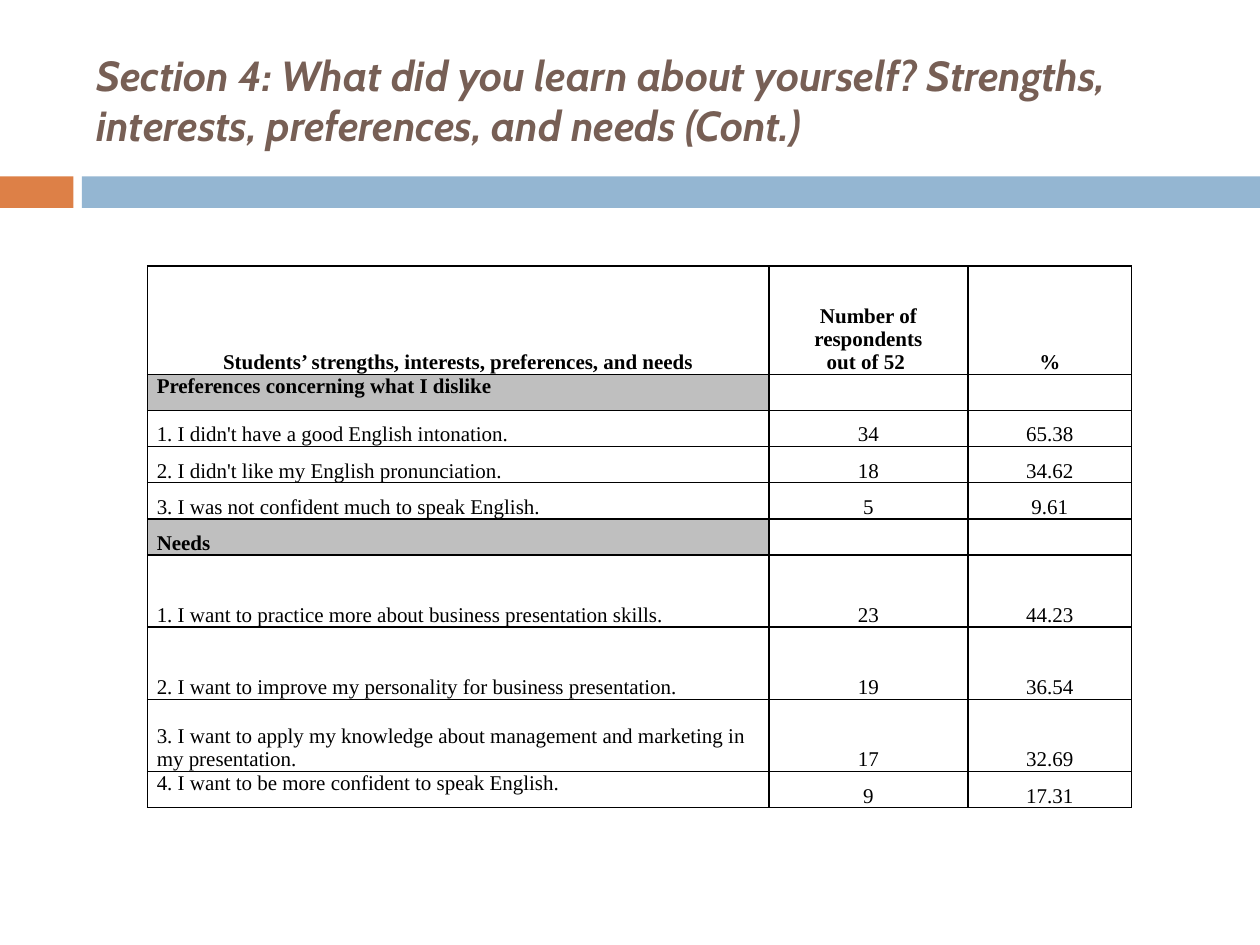
from dataclasses import dataclass

from lxml.etree import SubElement
from pptx import Presentation
from pptx.dml.color import RGBColor
from pptx.enum.shapes import MSO_SHAPE
from pptx.enum.text import MSO_ANCHOR, MSO_AUTO_SIZE, PP_ALIGN
from pptx.oxml.ns import qn
from pptx.util import Pt


@dataclass(frozen=True)
class Theme:
    title: str = "775F55"
    accent: str = "DD8047"
    band: str = "94B6D2"
    section: str = "BFBFBF"
    ink: str = "000000"
    title_font: str = "Cabin"
    body_font: str = "Times New Roman"
    title_size: float = 24
    body_size: float = 12
    border: float = 1


THEME = Theme()
TITLE = ("Section 4: What did you learn about yourself? Strengths, interests, "
         "preferences, and needs (Cont.)")
COLUMNS = (355, 113.8, 93.5)
HEADER = ("Students’ strengths, interests, preferences, and needs",
          "Number of respondents\nout of 52 ", "%")
# Height in row units, label anchor, cell texts; a lone label is a section row
ROWS = [
    (3, MSO_ANCHOR.BOTTOM, HEADER),
    (1, MSO_ANCHOR.TOP, ("Preferences concerning what I dislike",)),
    (1, MSO_ANCHOR.BOTTOM, ("1. I didn't have a good English intonation.", "34", "65.38")),
    (1, MSO_ANCHOR.BOTTOM, ("2. I didn't like my English pronunciation.", "18", "34.62")),
    (1, MSO_ANCHOR.BOTTOM, ("3. I was not confident much to speak English.", "5", "9.61")),
    (1, MSO_ANCHOR.BOTTOM, ("Needs",)),
    (2, MSO_ANCHOR.BOTTOM,
     ("1. I want to practice more about business presentation skills.", "23", "44.23")),
    (2, MSO_ANCHOR.BOTTOM,
     ("2. I want to improve my personality for business presentation.", "19", "36.54")),
    (2, MSO_ANCHOR.BOTTOM,
     ("3. I want to apply my knowledge about management and marketing in my presentation.",
      "17", "32.69")),
    (1, MSO_ANCHOR.TOP, ("4. I want to be more confident to speak English.", "9", "17.31")),
]


def rgb(color):
    return RGBColor.from_string(color)


def set_font(p, name, size, color, bold, italic=False):
    f = p.font
    f.name, f.size, f.bold, f.italic = name, Pt(size), bold, italic
    f.color.rgb = rgb(color)


def add_title(s, left, top, width, height):
    sp = s.shapes.title
    sp.left, sp.top, sp.width, sp.height = map(Pt, (left, top, width, height))
    tf = sp.text_frame
    tf.text = TITLE
    tf.auto_size = MSO_AUTO_SIZE.NONE
    tf.vertical_anchor = MSO_ANCHOR.MIDDLE
    p = tf.paragraphs[0]
    p.alignment = PP_ALIGN.LEFT
    set_font(p, THEME.title_font, THEME.title_size, THEME.title, True, True)


def add_divider(s, left, top, width, height):
    """Short accent block, a gap, then a band over the rest of the width."""
    block, gap = 42, 4.8
    rest = block + gap
    for x, w, color in ((left, block, THEME.accent),
                        (left + rest, width - rest, THEME.band)):
        sp = s.shapes.add_shape(MSO_SHAPE.RECTANGLE, Pt(x), Pt(top), Pt(w), Pt(height))
        sp.shadow.inherit = False
        sp.fill.solid()
        sp.fill.fore_color.rgb = rgb(color)
        sp.line.fill.background()


def add_borders(cell):
    tc_pr = cell._tc.get_or_add_tcPr()
    for i, side in enumerate(("lnL", "lnR", "lnT", "lnB")):
        ln = tc_pr.makeelement(qn(f"a:{side}"), {"w": str(Pt(THEME.border))})
        fill = SubElement(ln, qn("a:solidFill"))
        SubElement(fill, qn("a:srgbClr"), val=THEME.ink)
        tc_pr.insert(i, ln)


def format_cell(cell, text, anchor, align, bold, shaded):
    cell.text = text
    cell.vertical_anchor = anchor
    cell.margin_left = cell.margin_right = Pt(5.2)
    cell.margin_top = cell.margin_bottom = 0
    for p in cell.text_frame.paragraphs:
        p.alignment = align
        set_font(p, THEME.body_font, THEME.body_size, THEME.ink, bold)
    if shaded:
        cell.fill.solid()
        cell.fill.fore_color.rgb = rgb(THEME.section)
    else:
        cell.fill.background()
    add_borders(cell)


def add_survey_table(s, left, top, width, height):
    table = s.shapes.add_table(len(ROWS), len(COLUMNS), Pt(left), Pt(top),
                               Pt(width), Pt(height)).table
    table.first_row = table.horz_banding = False
    for column, w in zip(table.columns, COLUMNS):
        column.width = Pt(w * width / sum(COLUMNS))
    unit = height / sum(units for units, _, _ in ROWS)
    for i, (units, label_anchor, texts) in enumerate(ROWS):
        table.rows[i].height = Pt(units * unit)
        header, section = i == 0, len(texts) == 1
        for j in range(len(COLUMNS)):
            label = j == 0
            format_cell(table.cell(i, j),
                        text=texts[j] if j < len(texts) else "",
                        anchor=label_anchor if label else MSO_ANCHOR.BOTTOM,
                        align=PP_ALIGN.LEFT if label and not header else PP_ALIGN.CENTER,
                        bold=header or section,
                        shaded=label and section)


def main():
    prs = Presentation()
    prs.slide_width, prs.slide_height = Pt(720), Pt(540)
    s = prs.slides.add_slide(prs.slide_layouts[5])
    add_divider(s, 0, 100.8, 720, 18)
    add_title(s, 48, 18, 642, 78)
    add_survey_table(s, 84.4, 152, 562.3, 309.6)
    prs.save("out.pptx")


if __name__ == "__main__":
    main()
